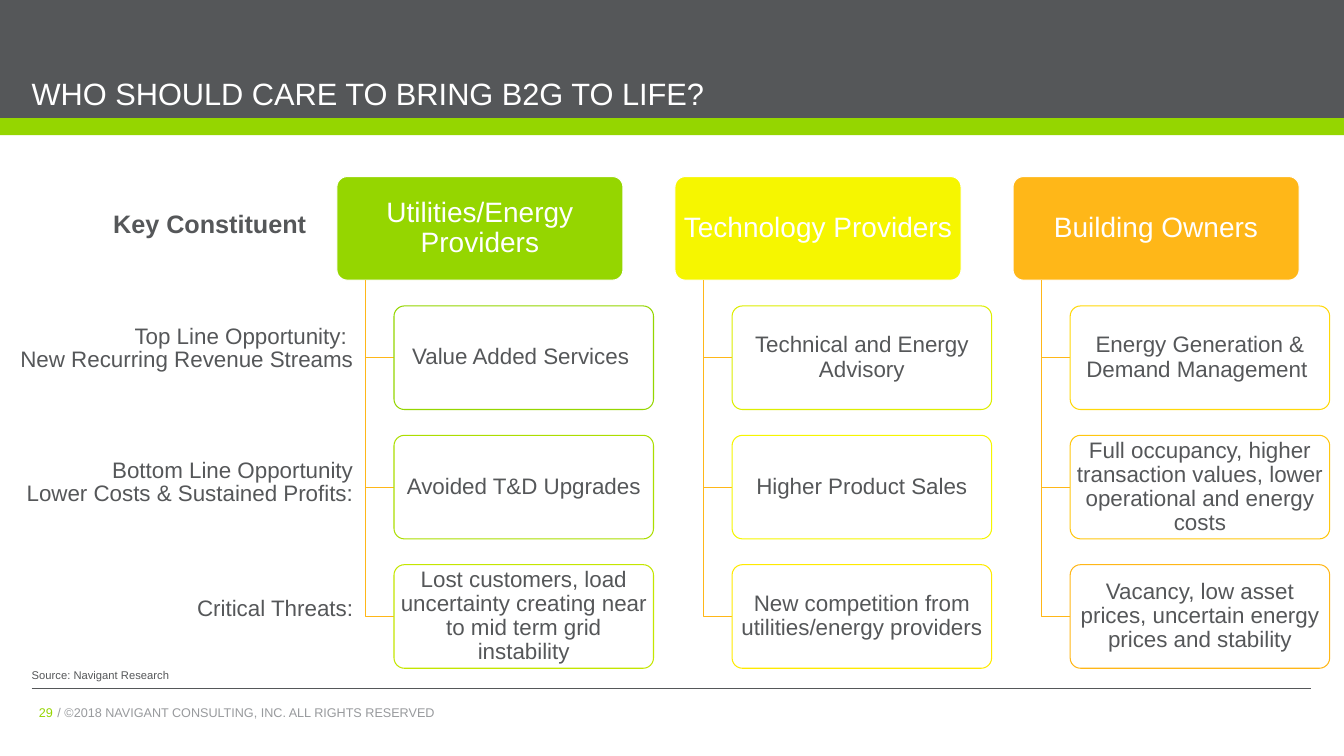
"""Build the slide on who should care to bring B2G to life."""
from dataclasses import dataclass

from lxml.etree import SubElement
from pptx import Presentation
from pptx.dml.color import RGBColor
from pptx.enum.shapes import MSO_CONNECTOR, MSO_SHAPE
from pptx.enum.text import MSO_ANCHOR, PP_ALIGN
from pptx.oxml.ns import qn
from pptx.util import Cm, Pt


@dataclass(frozen=True)
class Theme:
    font: str = "Arial"
    grey: str = "555759"
    pale: str = "989A9D"
    green: str = "95D600"
    amber: str = "FFB718"
    white: str = "FFFFFF"
    title: int = 22
    head: int = 20
    key: int = 18
    body: int = 16
    foot: int = 9
    source: int = 8
    line: float = 0.75


THEME = Theme()
LEFT, TOP = 8.49, 4.45
STEP, PITCH = 8.52, 3.26
HEAD, CARD, HIGH = 7.21, 6.54, 2.61
STEM, INDENT = 0.72, 1.44
EDGE = 9.15

GROUPS = [
    ("Utilities/Energy Providers", THEME.green, [
        ("Value Added Services ", "95D600"),
        ("Avoided T&D Upgrades", "ACDE00"),
        ("Lost customers, load uncertainty creating near to mid term grid instability", "C4E600"),
    ]),
    ("Technology Providers", "F6F600", [
        ("Technical and Energy Advisory", "DDEE00"),
        ("Higher Product Sales", "F6F600"),
        ("New competition from utilities/energy providers", "FFEA00"),
    ]),
    ("Building Owners", THEME.amber, [
        ("Energy Generation & Demand Management ", "FFD808"),
        ("Full occupancy, higher transaction values, lower operational and energy costs", "FFC710"),
        ("Vacancy, low asset prices, uncertain energy prices and stability", "FFB718"),
    ]),
]

LABELS = [
    (0.13, 8.08, 1.63, "Top Line Opportunity: \vNew Recurring Revenue Streams"),
    (0.3, 11.46, 1.63, "Bottom Line Opportunity\nLower Costs & Sustained Profits:"),
    (4.65, 14.94, 0.94, "Critical Threats:"),
]


def write(shape, text, size, color, align=PP_ALIGN.LEFT, space=0.86,
          pad=(0.25, 0.13), anchor=MSO_ANCHOR.TOP, bold=False):
    frame = shape.text_frame
    frame.word_wrap = True
    frame.vertical_anchor = anchor
    frame.margin_left = frame.margin_right = Cm(pad[0])
    frame.margin_top = frame.margin_bottom = Cm(pad[1])
    frame.text = text
    for para in frame.paragraphs:
        para.alignment = align
        para.line_spacing = space
        para.font.name = THEME.font
        para.font.size = Pt(size)
        para.font.bold = bold
        para.font.color.rgb = RGBColor.from_string(color)


def label(slide, box, text, size, color, **style):
    shape = slide.shapes.add_textbox(*map(Cm, box))
    write(shape, text, size, color, **style)


def ink(line, color):
    line.color.rgb = RGBColor.from_string(color)
    line.width = Pt(THEME.line)


def block(slide, kind, box, fill, edge=None):
    shape = slide.shapes.add_shape(kind, *map(Cm, box))
    shape.shadow.inherit = False
    shape.fill.solid()
    shape.fill.fore_color.rgb = RGBColor.from_string(fill)
    if edge:
        ink(shape.line, edge)
    else:
        shape.line.fill.background()
    return shape


def card(slide, box, fill, edge, text, size, color, pad):
    shape = block(slide, MSO_SHAPE.ROUNDED_RECTANGLE, box, fill, edge)
    shape.adjustments[0] = 0.1
    write(shape, text, size, color, align=PP_ALIGN.CENTER, space=0.9,
          pad=pad, anchor=MSO_ANCHOR.MIDDLE)


def branch(slide, left, top, right, base):
    path = slide.shapes.build_freeform(Cm(left), Cm(top))
    path.add_line_segments([(Cm(left), Cm(base)), (Cm(right), Cm(base))], close=False)
    shape = path.convert_to_shape()
    shape.shadow.inherit = False
    shape.fill.background()
    ink(shape.line, THEME.amber)


def rule(slide, left, right, top):
    line = slide.shapes.add_connector(
        MSO_CONNECTOR.STRAIGHT, Cm(left), Cm(top), Cm(right), Cm(top))
    SubElement(line._element.spPr, qn("a:effectLst"))
    ink(line.line, THEME.grey)


def column(slide, left, name, color, cards):
    card(slide, (left, TOP, HEAD, HIGH), color, THEME.white,
         name, THEME.head, THEME.white, (0.1, 0.08))
    for row, (text, edge) in enumerate(cards, 1):
        top = TOP + row * PITCH
        branch(slide, left + STEM, TOP + HIGH, left + INDENT, top + HIGH / 2)
        card(slide, (left + INDENT, top, CARD, HIGH), THEME.white, edge,
             text, THEME.body, THEME.grey, (0.08, 0.05))


def frame(slide):
    block(slide, MSO_SHAPE.RECTANGLE, (0, 0, 33.87, 2.98), THEME.grey)
    block(slide, MSO_SHAPE.RECTANGLE, (0, 2.98, 33.87, 0.43), THEME.green)
    rule(slide, 0.8, 33.05, 17.36)
    label(slide, (1.2, 17.68, 16.18, 0.57),
          "/ ©2018 NAVIGANT CONSULTING, INC. ALL RIGHTS RESERVED", THEME.foot, THEME.pale)
    label(slide, (0.46, 17.68, 1.12, 0.57), "29", THEME.foot, THEME.green,
          align=PP_ALIGN.RIGHT)
    flush = dict(space=1.0, pad=(0, 0), anchor=MSO_ANCHOR.BOTTOM)
    label(slide, (0.8, 0, 32.25, 2.82), "WHO SHOULD CARE TO BRING B2G TO LIFE?",
          THEME.title, THEME.white, **flush)
    label(slide, (0.8, 16.85, 32.25, 0.33), "Source: Navigant Research",
          THEME.source, THEME.grey, **flush)


def main():
    deck = Presentation()
    deck.slide_width, deck.slide_height = Cm(33.87), Cm(19.05)
    slide = deck.slides.add_slide(deck.slide_layouts[6])
    frame(slide)
    for place, group in enumerate(GROUPS):
        column(slide, LEFT + place * STEP, *group)
    label(slide, (2.06, 5.23, 6.45, 0.92), "Key Constituent", THEME.key, THEME.grey,
          align=PP_ALIGN.CENTER, bold=True)
    for left, top, high, text in LABELS:
        label(slide, (left, top, EDGE - left, high), text, THEME.body, THEME.grey,
              align=PP_ALIGN.RIGHT)
    deck.save("out.pptx")


if __name__ == "__main__":
    main()
